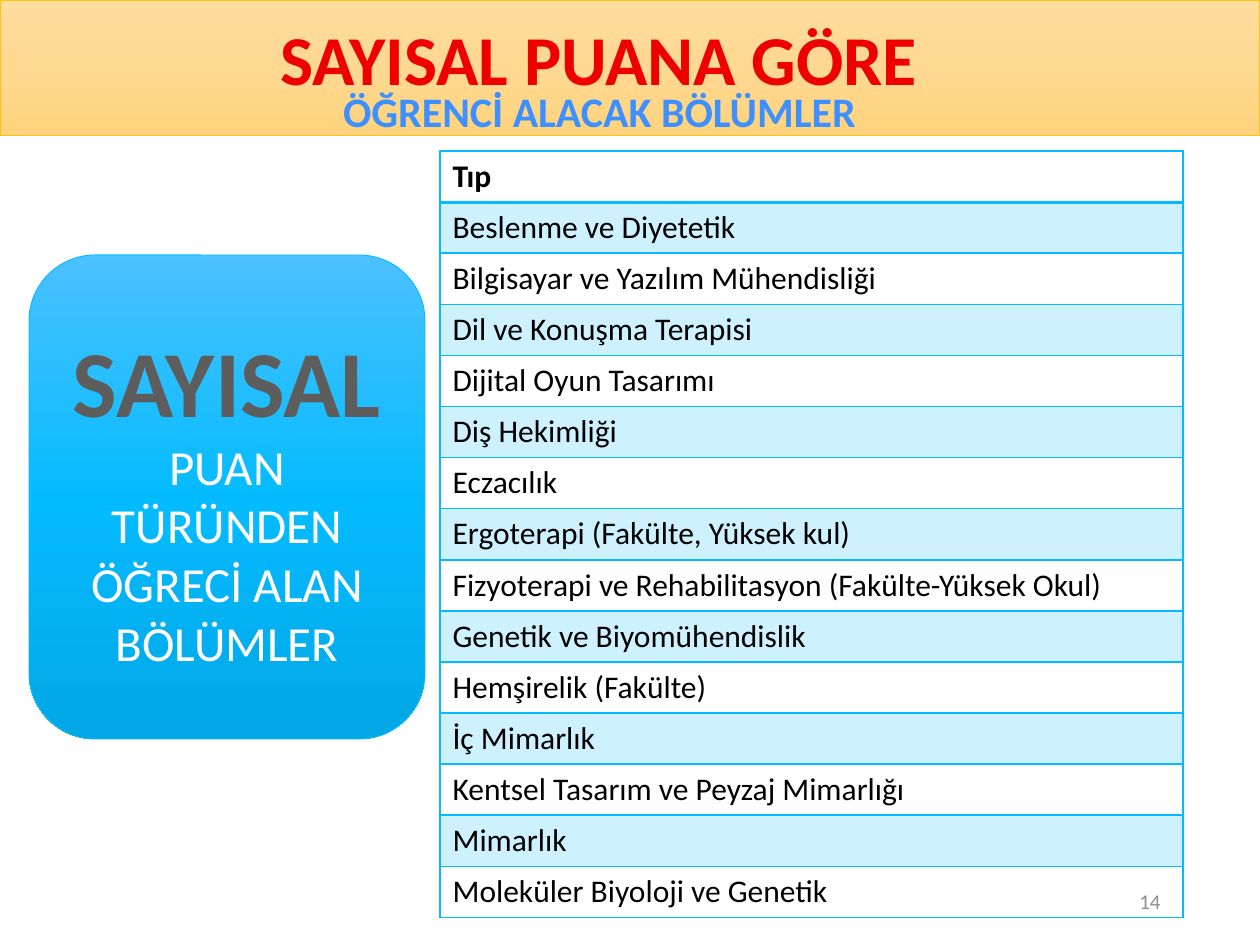
from lxml.etree import SubElement
from pptx import Presentation
from pptx.dml.color import RGBColor
from pptx.enum.shapes import MSO_SHAPE
from pptx.enum.text import MSO_ANCHOR, MSO_AUTO_SIZE, PP_ALIGN
from pptx.oxml.ns import qn
from pptx.util import Emu, Pt

SCALE = 914400 / 126
BLUE = "05BBFF"
ROWS = [
    "Tıp", "Beslenme ve Diyetetik", "Bilgisayar ve Yazılım Mühendisliği",
    "Dil ve Konuşma Terapisi", "Dijital Oyun Tasarımı", "Diş Hekimliği",
    "Eczacılık", "Ergoterapi (Fakülte, Yüksek kul)",
    "Fizyoterapi ve Rehabilitasyon (Fakülte-Yüksek Okul)",
    "Genetik ve Biyomühendislik", "Hemşirelik (Fakülte)", "İç Mimarlık",
    "Kentsel Tasarım ve Peyzaj Mimarlığı", "Mimarlık",
    "Moleküler Biyoloji ve Genetik",
]


def px(*nums):
    return [Emu(round(n * SCALE)) for n in nums]


def color(code):
    return RGBColor.from_string(code)


def shade(fill, node, stops):
    """Fill from top to bottom with (percent, colour) stops."""
    fill.gradient()
    fill.gradient_angle = 270
    group = node.find(".//" + qn("a:gsLst"))
    for old in list(group):
        group.remove(old)
    for pos, code in stops:
        stop = SubElement(group, qn("a:gs"), pos=str(pos * 1000))
        SubElement(stop, qn("a:srgbClr"), val=code)


def write(para, text, size, ink, bold=False):
    """Add a run; ink is one colour or a list of gradient stops."""
    run = para.add_run()
    run.text = text
    for key, val in {"name": "Calibri", "size": Pt(size), "bold": bold}.items():
        setattr(run.font, key, val)
    if isinstance(ink, str):
        run.font.color.rgb = color(ink)
    else:
        shade(run.font.fill, run._r, ink)


def setup(frame, align, anchor=MSO_ANCHOR.TOP):
    form = {"word_wrap": True, "auto_size": MSO_AUTO_SIZE.NONE,
            "vertical_anchor": anchor}
    for key, val in form.items():
        setattr(frame, key, val)
    para = frame.paragraphs[0]
    para.alignment = align
    return para


def panel(slide, kind, box, stops, edge):
    shape = slide.shapes.add_shape(kind, *px(*box))
    shape.shadow.inherit = False
    shade(shape.fill, shape._element.spPr, stops)
    shape.line.color.rgb = color(edge)
    shape.line.width = Pt(0.5)
    return shape


def label(slide, box, text, size, ink, align, anchor=MSO_ANCHOR.TOP, bold=False):
    frame = slide.shapes.add_textbox(*px(*box)).text_frame
    write(setup(frame, align, anchor), text, size, ink, bold)


def header(slide, x, y, w, h):
    panel(slide, MSO_SHAPE.RECTANGLE, (x, y, w, h),
          [(0, "FFDD9F"), (50, "FFD891"), (100, "FFD37D")], "FFC30B")
    title = slide.shapes.title
    slide.shapes._spTree.append(title._element)  # in front of the banner
    box = px(x - 31, y + 9, w, 149)
    for key, val in zip(("left", "top", "width", "height"), box):
        setattr(title, key, val)
    para = setup(title.text_frame, PP_ALIGN.CENTER)
    write(para, "SAYISAL PUANA GÖRE", 40, "EF0000", True)
    label(slide, (x + 34, y + 79, 1131, 63), "ÖĞRENCİ ALACAK BÖLÜMLER", 24,
          [(0, "004577"), (78, "3F90FF"), (100, "EFF4FF")],
          PP_ALIGN.CENTER, bold=True)


def badge(slide, *box):
    shape = panel(slide, MSO_SHAPE.ROUNDED_RECTANGLE, box,
                  [(0, "4BC1FF"), (50, BLUE), (100, "02A7E5")], BLUE)
    para = setup(shape.text_frame, PP_ALIGN.CENTER, MSO_ANCHOR.MIDDLE)
    write(para, "SAYISAL", 54,
          [(0, "555555"), (49, "5D5D5D"), (50, "000000"), (100, "000000")], True)
    write(para, " PUAN TÜRÜNDEN ÖĞRECİ ALAN BÖLÜMLER", 28, "FFFFFF")


def border(cell, widths):
    """Draw the left, right, top and bottom edges, widths in points."""
    props = cell._tc.get_or_add_tcPr()
    for spot, (side, width) in enumerate(zip("LRTB", widths)):
        line = SubElement(props, qn("a:ln" + side), w=str(Pt(width)))
        fill = SubElement(line, qn("a:solidFill"))
        SubElement(fill, qn("a:srgbClr"), val=BLUE)
        props.insert(spot, line)


def listing(slide, *box):
    table = slide.shapes.add_table(len(ROWS), 1, *px(*box)).table
    table.horz_banding = False
    for num, text in enumerate(ROWS):
        cell = table.cell(num, 0)
        write(cell.text_frame.paragraphs[0], text, 18, "000000", num == 0)
        if num % 2:
            cell.fill.solid()
            cell.fill.fore_color.rgb = color(BLUE)
            tint = cell._tc.tcPr.find(".//" + qn("a:srgbClr"))
            SubElement(tint, qn("a:alpha"), val="20000")
        else:
            cell.fill.background()
        border(cell, (1, 1, 2 if num == 1 else 1, 2 if num == 0 else 1))


def main():
    deck = Presentation()
    deck.slide_width, deck.slide_height = px(1260, 945)
    slide = deck.slides.add_slide(deck.slide_layouts[5])
    badge(slide, 29, 255, 396, 484)
    header(slide, 0, 0, 1260, 136)
    label(slide, (890, 876, 283, 50), "14", 12, "8C8C8C",
          PP_ALIGN.RIGHT, MSO_ANCHOR.MIDDLE)
    listing(slide, 440, 151, 743, 756)
    deck.save("out.pptx")


if __name__ == "__main__":
    main()
